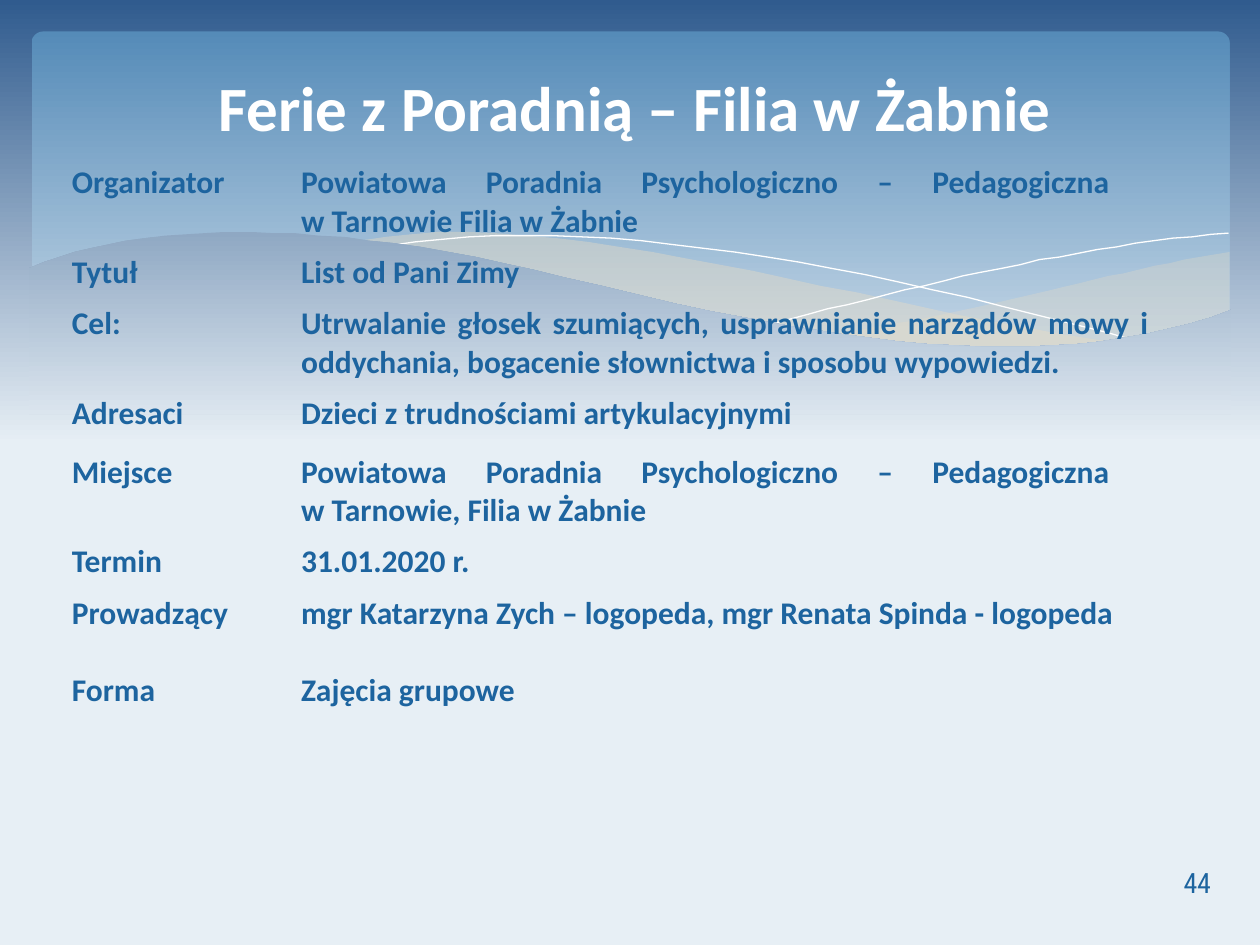
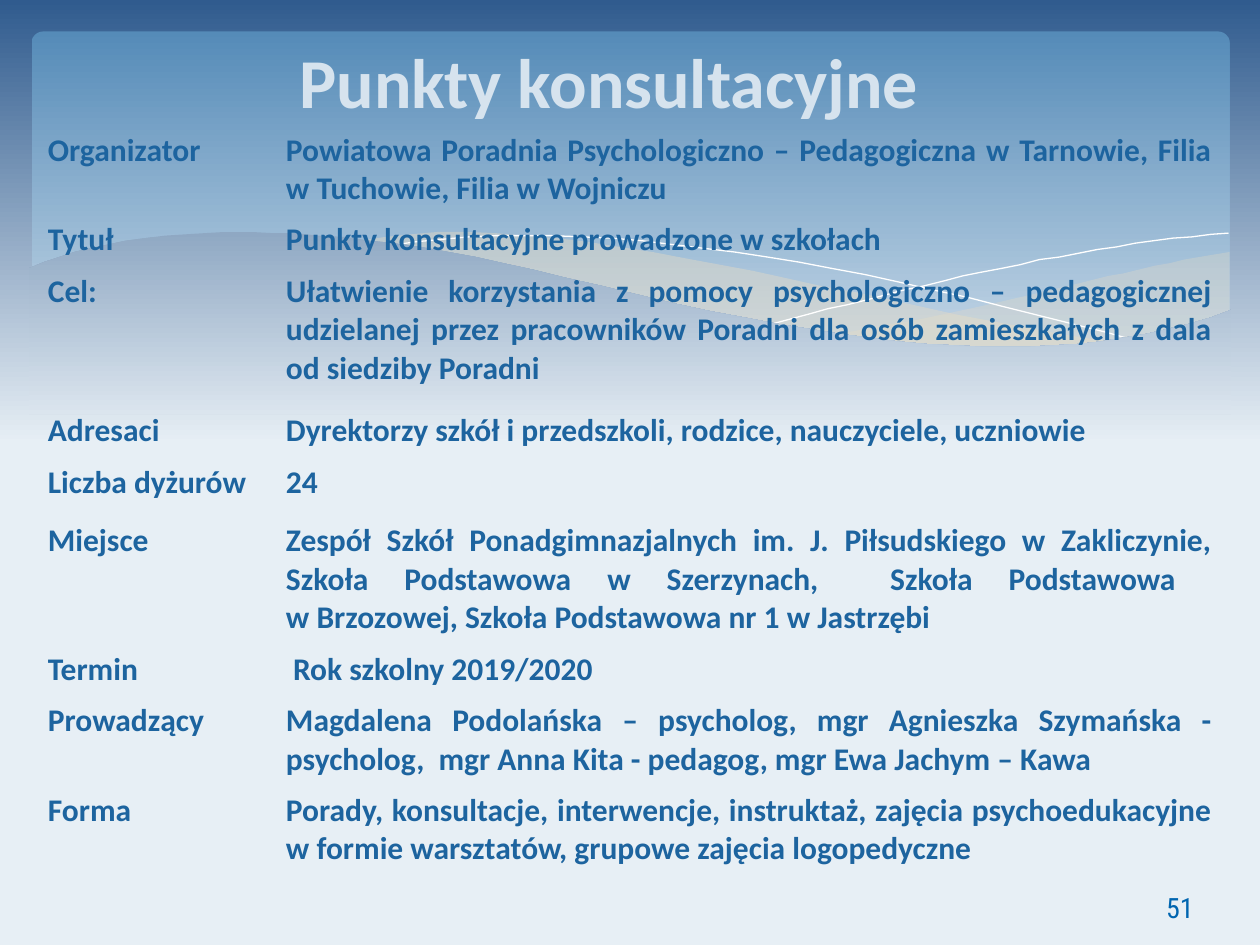
from math import comb

from lxml.etree import SubElement
from pptx import Presentation
from pptx.dml.color import RGBColor
from pptx.enum.shapes import MSO_SHAPE
from pptx.enum.text import MSO_ANCHOR, PP_ALIGN
from pptx.oxml.ns import qn
from pptx.util import Inches, Pt

SKY_TOP = RGBColor(0x30, 0x5B, 0x8E)
SKY_BOTTOM = RGBColor(0xE7, 0xEF, 0xF5)
WAVE_TOP = RGBColor(0x8F, 0xA8, 0xC3)
WAVE_BOTTOM = RGBColor(0xDB, 0xE5, 0xEE)
PANEL_TOP = RGBColor(0x55, 0x8B, 0xB8)
PANEL_BOTTOM = RGBColor(0xBF, 0xD3, 0xE4)
SAND = RGBColor(0xEB, 0xDD, 0xC3)
WHITE = RGBColor(0xFF, 0xFF, 0xFF)
PALE = RGBColor(0xD6, 0xE3, 0xEE)
BLUE = RGBColor(0x1D, 0x64, 0x9F)
NUMBER_BLUE = RGBColor(0x00, 0x65, 0xB0)

BODY_FONT = "Calibri"
NUMBER_FONT = "Roboto Condensed"
NO_GRID_STYLE = "{2D5ABB26-0587-4C30-8999-92F81FD0307C}"

presentation = Presentation()
presentation.slide_width = Inches(10)
presentation.slide_height = Inches(7.5)
GRID = presentation.slide_width // 1000

ONE_LINE, TWO_LINES, THREE_LINES = 41, 71, 102
CURVE_STEPS = 24

RIGHT_BAND_TOP = ((976, 200), (880, 215), (790, 246), (661, 265))
RIGHT_BAND_BOTTOM = ((661, 265), (770, 283), (880, 285), (976, 247))
LEFT_BAND_TOP = ((286, 191), (440, 160), (690, 245), (893, 273))
LEFT_BAND_BOTTOM = ((893, 273), (720, 302), (450, 214), (286, 191))
FALLING_LINE = ((309, 195), (470, 168), (680, 210), (907, 272))
RISING_LINE = ((613, 257), (730, 226), (860, 194), (975, 185))
WAVE_TROUGH = ((977, 246), (847, 294), (697, 282), (447, 220))
WAVE_CREST = ((447, 220), (257, 172), (113, 175), (23, 213))
WAVE_FLOOR = ((23, 329), (977, 329))

SAND_BANDS = [
    (29, (RIGHT_BAND_TOP, RIGHT_BAND_BOTTOM)),
    (40, (LEFT_BAND_TOP, LEFT_BAND_BOTTOM)),
]
WHITE_LINES = [FALLING_LINE, RISING_LINE]
WAVE = (WAVE_TROUGH, WAVE_CREST, WAVE_FLOOR)

SLIDES = [
    {
        "title": ("Ferie z Poradnią – Filia w Żabnie", (51, 29, 906, 110), 36, WHITE),
        "number": ("44", (844, 680, 127, 40), PP_ALIGN.RIGHT, BLUE),
        "place": (47, 125),
        "columns": (182, 693),
        "rows": [
            (TWO_LINES, "Organizator",
             "Powiatowa Poradnia Psychologiczno – Pedagogiczna \vw Tarnowie Filia w Żabnie"),
            (ONE_LINE, "Tytuł", "List od Pani Zimy"),
            (TWO_LINES, "Cel:",
             "Utrwalanie głosek szumiących, usprawnianie narządów mowy i oddychania, "
             "bogacenie słownictwa i sposobu wypowiedzi."),
            (47, "Adresaci", "Dzieci z trudnościami artykulacyjnymi"),
            (TWO_LINES, "Miejsce",
             "Powiatowa Poradnia Psychologiczno – Pedagogiczna \vw Tarnowie, Filia w Żabnie"),
            (ONE_LINE, "Termin", "31.01.2020 r."),
            (61, "Prowadzący", "mgr Katarzyna Zych – logopeda, mgr Renata Spinda - logopeda"),
            (87, "Forma", "Zajęcia grupowe"),
        ],
    },
    {
        "title": ("Punkty konsultacyjne ", (44, 29, 891, 70), 40, PALE),
        "number": ("51", (873, 700, 127, 40), PP_ALIGN.CENTER, NUMBER_BLUE),
        "place": (28, 99),
        "columns": (189, 755),
        "rows": [
            (TWO_LINES, "Organizator",
             "Powiatowa Poradnia Psychologiczno – Pedagogiczna w Tarnowie, "
             "Filia w Tuchowie, Filia w Wojniczu"),
            (ONE_LINE, "Tytuł", "Punkty konsultacyjne prowadzone w szkołach"),
            (111, "Cel:",
             "Ułatwienie korzystania z pomocy psychologiczno – pedagogicznej udzielanej "
             "przez pracowników Poradni dla osób zamieszkałych z dala od siedziby Poradni"),
            (ONE_LINE, "Adresaci",
             "Dyrektorzy szkół i przedszkoli, rodzice, nauczyciele, uczniowie"),
            (46, "Liczba dyżurów", "24"),
            (THREE_LINES, "Miejsce",
             "Zespół Szkół Ponadgimnazjalnych im. J. Piłsudskiego w Zakliczynie, "
             "Szkoła Podstawowa w Szerzynach,  Szkoła Podstawowa "
             "\vw Brzozowej, Szkoła Podstawowa nr 1 w Jastrzębi"),
            (ONE_LINE, "Termin", " Rok szkolny 2019/2020"),
            (TWO_LINES, "Prowadzący",
             "Magdalena Podolańska – psycholog, mgr Agnieszka Szymańska - psycholog,  "
             "mgr Anna Kita - pedagog, mgr Ewa Jachym – Kawa"),
            (TWO_LINES, "Forma",
             "Porady, konsultacje, interwencje, instruktaż, zajęcia psychoedukacyjne "
             "w formie warsztatów, grupowe zajęcia logopedyczne"),
        ],
    },
]


def fill_downwards(fill, top, bottom, end):
    fill.gradient()
    fill.gradient_angle = 270
    for stop, color, position in zip(fill.gradient_stops, (top, bottom), (0, end)):
        stop.color.rgb = color
        stop.position = position


def draw_bezier_outline(slide, edges, closed):
    points = []
    for controls in edges:
        degree = len(controls) - 1
        for step in range(CURVE_STEPS + 1):
            share = step / CURVE_STEPS
            weights = [comb(degree, index) * share ** index * (1 - share) ** (degree - index)
                       for index in range(degree + 1)]
            points.append([sum(weight * value for weight, value in zip(weights, axis))
                           for axis in zip(*controls)])
    builder = slide.shapes.build_freeform(*points[0], scale=GRID)
    builder.add_line_segments(points[1:], close=closed)
    shape = builder.convert_to_shape()
    shape.shadow.inherit = False
    shape.fill.background()
    shape.line.fill.background()
    return shape


for content in SLIDES:
    slide = presentation.slides.add_slide(presentation.slide_layouts[6])
    fill_downwards(slide.background.fill, SKY_TOP, SKY_BOTTOM, 0.47)

    panel = slide.shapes.add_shape(
        MSO_SHAPE.ROUNDED_RECTANGLE, *[GRID * length for length in (25, 25, 951, 270)])
    panel.adjustments[0] = 0.034
    panel.shadow.inherit = False
    panel.line.fill.background()
    fill_downwards(panel.fill, PANEL_TOP, PANEL_BOTTOM, 0.9)

    for opacity, edges in SAND_BANDS:
        band = draw_bezier_outline(slide, edges, True)
        band.fill.solid()
        band.fill.fore_color.rgb = SAND
        band_color = band._element.spPr.find(qn("a:solidFill"))[0]
        SubElement(band_color, qn("a:alpha"), val=str(opacity * 1000))

    for edge in WHITE_LINES:
        white_line = draw_bezier_outline(slide, [edge], False)
        white_line.line.color.rgb = WHITE
        white_line.line.width = Pt(0)

    wave = draw_bezier_outline(slide, WAVE, True)
    fill_downwards(wave.fill, WAVE_TOP, WAVE_BOTTOM, 1)

    title, title_place, title_size, title_color = content["title"]
    title_box = slide.shapes.add_textbox(*[GRID * length for length in title_place])
    title_box.text_frame.vertical_anchor = MSO_ANCHOR.MIDDLE

    number, number_place, number_alignment, number_color = content["number"]
    number_box = slide.shapes.add_textbox(*[GRID * length for length in number_place])
    number_box.text_frame.vertical_anchor = MSO_ANCHOR.MIDDLE

    texts = [
        (title_box, title, BODY_FONT, title_size, title_color, True, PP_ALIGN.CENTER),
        (number_box, number, NUMBER_FONT, 16, number_color, False, number_alignment),
    ]

    rows, columns = content["rows"], content["columns"]
    left, top = content["place"]
    height = sum(row_height for row_height, label, description in rows)
    table = slide.shapes.add_table(
        len(rows), len(columns), GRID * left, GRID * top,
        GRID * sum(columns), GRID * height).table
    table.first_row = False
    table.horz_banding = False
    table._tbl.tblPr.find(qn("a:tableStyleId")).text = NO_GRID_STYLE
    for column, width in zip(table.columns, columns):
        column.width = GRID * width
    for row, (row_height, label, description) in zip(table.rows, rows):
        row.height = GRID * row_height
        for cell, text in zip(row.cells, (label, description)):
            cell.fill.background()
            texts.append((cell, text, BODY_FONT, 18, BLUE, True, PP_ALIGN.JUSTIFY))

    for holder, text, font_name, size, color, bold, alignment in texts:
        holder.text_frame.word_wrap = True
        holder.text_frame.text = text
        paragraph = holder.text_frame.paragraphs[0]
        paragraph.alignment = alignment
        for run in paragraph.runs:
            run.font.name = font_name
            run.font.size = Pt(size)
            run.font.bold = bold
            run.font.color.rgb = color

presentation.save("out.pptx")
